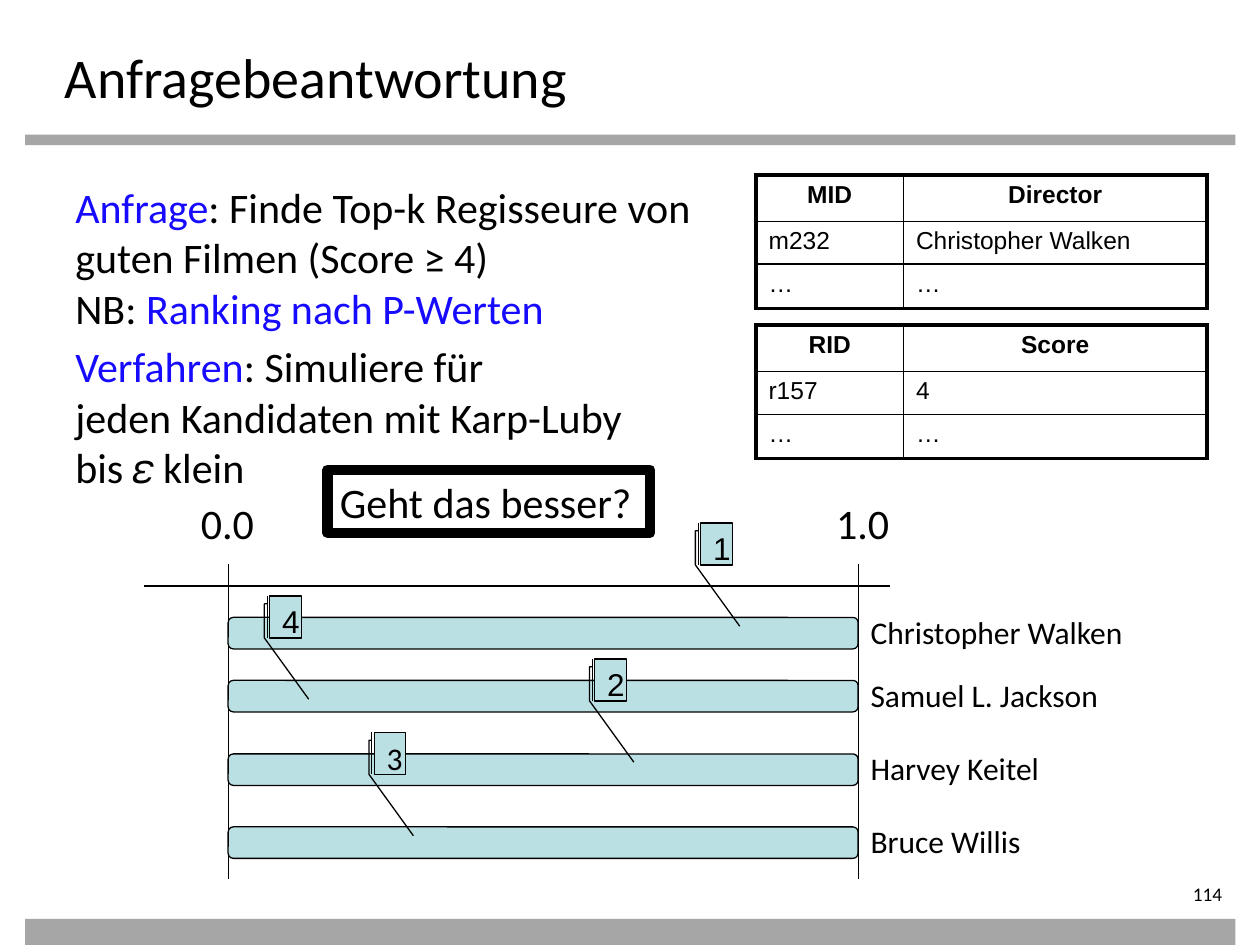
from lxml import etree
from pptx import Presentation
from pptx.dml import color
from pptx.enum import shapes, text
from pptx.oxml import ns
from pptx.util import Pt

HUES = {"ink": "000000", "blue": "170BFF", "bar": "BBE0E3",
        "gray": "A6A6A6", "white": "FFFFFF"}
KIND = shapes.MSO_SHAPE
LEFT, MID, RIGHT = text.PP_ALIGN.LEFT, text.PP_ALIGN.CENTER, text.PP_ALIGN.RIGHT


def hue(name):
    return color.RGBColor.from_string(HUES[name])


def style(par, size, face="Calibri", align=LEFT, bold=False):
    par.alignment = align
    par.font.size = Pt(size)
    par.font.name = face
    par.font.bold = bold
    par.font.color.rgb = hue("ink")


def label(slide, box, words, size, align=LEFT):
    item = slide.shapes.add_textbox(*map(Pt, box))
    frame = item.text_frame
    frame.word_wrap = True
    frame.text = words
    style(frame.paragraphs[0], size, align=align)
    return frame


def block(slide, kind, box, fill, line=0):
    item = slide.shapes.add_shape(kind, *map(Pt, box))
    item.shadow.inherit = False
    item.fill.solid()
    item.fill.fore_color.rgb = hue(fill)
    if line:
        item.line.color.rgb = hue("ink")
        item.line.width = Pt(line)
    else:
        item.line.fill.background()
    return item


def rule(slide, *ends):
    item = slide.shapes.add_connector(shapes.MSO_CONNECTOR.STRAIGHT, *map(Pt, ends))
    item.line.color.rgb = hue("ink")
    item.line.width = Pt(0.75)
    props = item._element.spPr
    etree.SubElement(props, ns.qn("a:effectLst"))


def body(slide, box, paras):
    """Each paragraph is a list of (words, hue) parts; newlines break lines."""
    frame = label(slide, box, "", 24)
    for i, parts in enumerate(paras):
        par = frame.add_paragraph() if i else frame.paragraphs[0]
        style(par, 24)
        if i:
            par.space_before = Pt(4.8)
        for words, shade in parts:
            for j, piece in enumerate(words.split("\n")):
                if j:
                    par.add_line_break()
                if piece:
                    run = par.add_run()
                    run.text = piece
                    run.font.color.rgb = hue(shade)


def edge(cell, side, width):
    props = cell._tc.get_or_add_tcPr()
    line = etree.SubElement(props, ns.qn("a:ln" + side), w=str(Pt(width)))
    fill = etree.SubElement(line, ns.qn("a:solidFill"))
    etree.SubElement(fill, ns.qn("a:srgbClr"), val=HUES["ink"])


def grid(slide, box, rows):
    table = slide.shapes.add_table(len(rows), 2, *map(Pt, box)).table
    table.first_row = table.horz_banding = False
    for col, width in zip(table.columns, (84.25, 173.5)):
        col.width = Pt(width)
    for row, height in zip(table.rows, (26.5, 24.5, 25.2)):
        row.height = Pt(height)
    for r, row in enumerate(rows):
        for c, words in enumerate(row):
            cell = table.cell(r, c)
            cell.text = words
            style(cell.text_frame.paragraphs[0], 14, "Arial",
                  LEFT if r else MID, r == 0)
            outer = {"L": c == 0, "R": c == 1, "T": r == 0, "B": r == len(rows) - 1}
            for side, thick in outer.items():
                edge(cell, side, 2.25 if thick else 1)
            cell.fill.background()


def mark(slide, x, y, rank, face):
    item = block(slide, KIND.LINE_CALLOUT_3_BORDER_AND_ACCENT_BAR,
                 (x, y, 18, 24), "bar", 0.75)
    for i, val in enumerate((0.19, -0.08, 0.19, -0.17, 1, -0.17, 2.46, 1.24)):
        item.adjustments[i] = val
    frame = item.text_frame
    frame.vertical_anchor = text.MSO_ANCHOR.TOP
    frame.text = rank
    style(frame.paragraphs[0], 18, face, MID)


def chart(slide, box, rows):
    """Scale from 0.0 to 1.0 with one bar per director and rank callouts."""
    x, y, wide, high = box
    for end in (x, x + wide):
        rule(slide, end, y, end, y + high)
    rule(slide, x - 48, y + 12.3, x + wide + 18, y + 12.3)
    label(slide, (x - 24.5, y - 41.7, 48, 36), "0.0", 24, MID)
    label(slide, (x + wide - 24.5, y - 41.7, 54, 36), "1.0", 24, MID)
    for name, top, *_ in rows:
        block(slide, KIND.ROUNDED_RECTANGLE, (x, y + top, wide, 18), "bar", 0.75)
        label(slide, (x + wide, y + top - 6.2, 180, 29), name, 18)
    for _, _, left, rise, rank, face in rows:
        mark(slide, x + left, y + rise, rank, face)


def question(slide, box, words):
    item = block(slide, KIND.RECTANGLE, box, "white", 6)
    frame = item.text_frame
    frame.word_wrap = False
    frame.vertical_anchor = text.MSO_ANCHOR.TOP
    frame.text = words
    style(frame.paragraphs[0], 24)


def master(slide, box, title, page):
    """Gray bars, title and page number."""
    x, y, wide, high = box
    block(slide, KIND.RECTANGLE, (x + 14.4, y + 77, wide - 28.4, 6), "gray")
    block(slide, KIND.RECTANGLE, (x + 14.4, y + high - 15, wide - 28.4, 15), "gray")
    label(slide, (x + 30, y + 21, 648, 108), title, 32)
    foot = label(slide, (x + 626, y + 504, 79.5, 16), page, 11, RIGHT)
    foot.margin_left = foot.margin_top = foot.margin_bottom = 0


def main():
    deck = Presentation()
    deck.slide_width, deck.slide_height = Pt(720), Pt(540)
    slide = deck.slides.add_slide(deck.slide_layouts[6])

    master(slide, (0, 0, 720, 540), "Anfragebeantwortung", "114")

    # Query and method
    body(slide, (36, 100, 684, 306), [
        [("Anfrage", "blue"),
         (": Finde Top-k Regisseure von\nguten Filmen (Score ≥ 4)\nNB: ", "ink"),
         ("Ranking nach P-Werten", "blue")],
        [("Verfahren", "blue"),
         (": Simuliere für\njeden Kandidaten mit Karp-Luby\nbis 𝜀 klein", "ink")],
    ])

    # Bars: name, bar top, callout left, callout top, rank, face
    chart(slide, (130.4, 322.5, 360, 180), [
        ("Christopher Walken", 30.3, 270, -23.7, "1", "Arial"),
        ("Samuel L. Jackson", 66.3, 23.7, 18, "4", "Arial"),
        ("Harvey Keitel", 108.3, 209.5, 54, "2", "Arial"),
        ("Bruce Willis", 150, 83.5, 96, "3", "Calibri"),
    ])
    question(slide, (187.2, 268.5, 184.3, 36), "Geht das besser?")

    # Tables
    grid(slide, (432, 100, 257.75, 76.2),
         [("MID", "Director"), ("m232", "Christopher Walken"), ("…", "…")])
    grid(slide, (432, 185.75, 257.75, 76.2),
         [("RID", "Score"), ("r157", "4"), ("…", "…")])

    deck.save("out.pptx")


if __name__ == "__main__":
    main()
